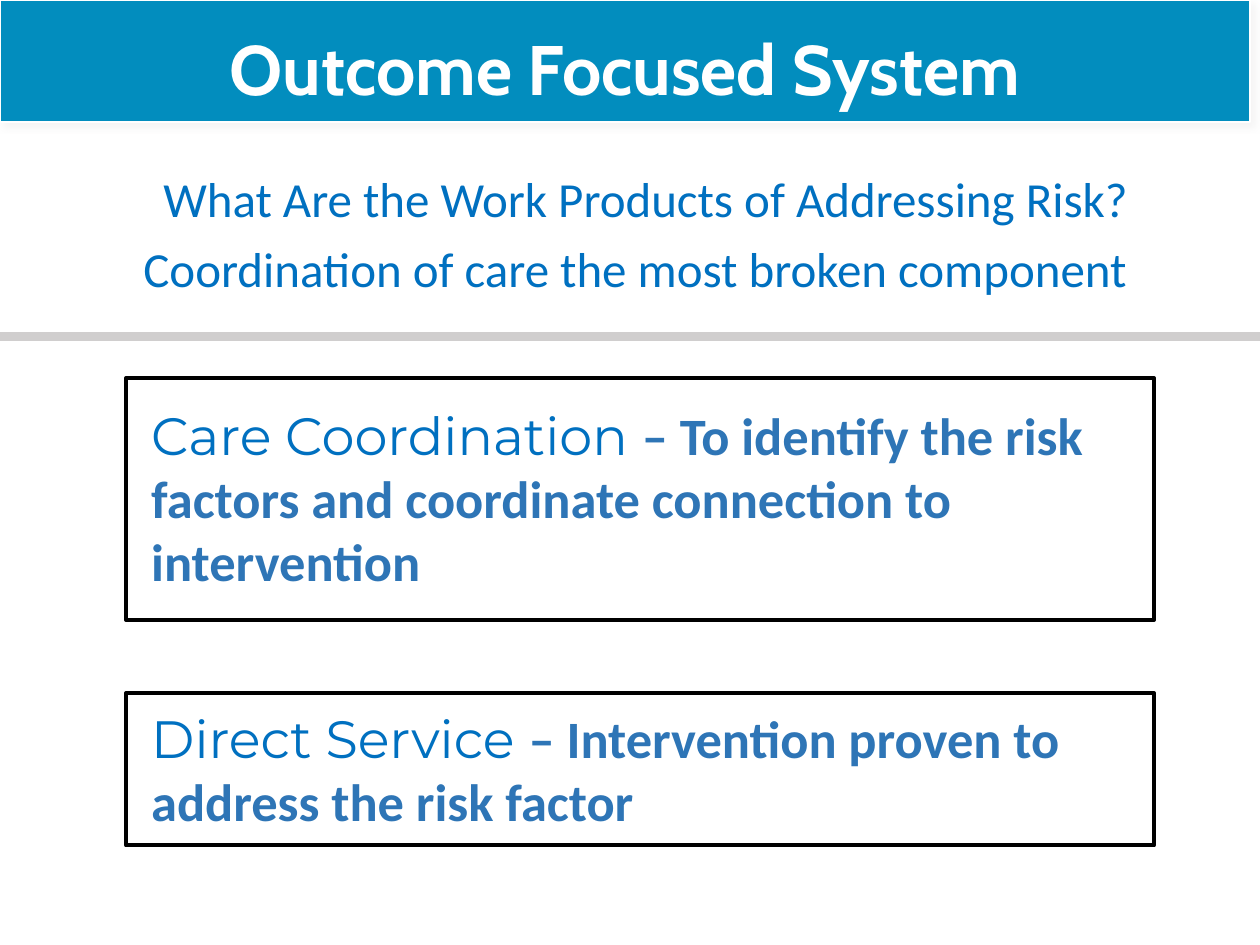
from lxml.etree import SubElement
from pptx import Presentation
from pptx.dml.color import RGBColor
from pptx.enum.shapes import MSO_CONNECTOR, MSO_SHAPE
from pptx.enum.text import MSO_ANCHOR, PP_ALIGN
from pptx.oxml.ns import qn
from pptx.util import Pt

COLORS = {
    "banner": "028DBE",
    "white": "FFFFFF",
    "black": "000000",
    "blue": "0070C0",
    "steel": "2E75B6",
    "rule": "D0CECE",
    "shadow": "E7E6E6",
}


def rgb(name):
    return RGBColor.from_string(COLORS[name])


def add_text(paragraph, text, *, size, font, color, bold=False):
    run = paragraph.add_run()
    run.text = text
    run.font.size = Pt(size)
    run.font.name = font
    run.font.bold = bold
    run.font.color.rgb = rgb(color)


def set_frame(shape, side, vertical):
    """Wrap the text from the top of the shape, with these insets."""
    frame = shape.text_frame
    frame.word_wrap = True
    frame.vertical_anchor = MSO_ANCHOR.TOP
    frame.margin_left = frame.margin_right = Pt(side)
    frame.margin_top = frame.margin_bottom = Pt(vertical)
    return frame


def add_rectangle(slide, box, line, weight, fill=None):
    rectangle = slide.shapes.add_shape(MSO_SHAPE.RECTANGLE, *map(Pt, box))
    rectangle.shadow.inherit = False
    if fill:
        rectangle.fill.solid()
        rectangle.fill.fore_color.rgb = rgb(fill)
    else:
        rectangle.fill.background()
    rectangle.line.color.rgb = rgb(line)
    rectangle.line.width = Pt(weight)
    return rectangle


def add_soft_shadow(shape):
    effects = shape._element.spPr.find(qn("a:effectLst"))
    shadow = SubElement(effects, qn("a:outerShdw"), blurRad=str(Pt(4)),
                        dist=str(Pt(3)), dir="2700000", rotWithShape="0")
    color = SubElement(shadow, qn("a:srgbClr"), val=COLORS["shadow"])
    SubElement(color, qn("a:alpha"), val="40000")


def add_banner(slide, box, title):
    banner = add_rectangle(slide, box, "white", 1, fill="banner")
    add_soft_shadow(banner)
    paragraph = set_frame(banner, 14.4, 14.4).paragraphs[0]
    paragraph.alignment = PP_ALIGN.CENTER
    add_text(paragraph, title, size=40, font="Cabin", color="white", bold=True)


def add_heading(slide, box, question, answer):
    heading = slide.shapes.add_textbox(*map(Pt, box))
    frame = set_frame(heading, 7.2, 3.6)
    first, second = frame.paragraphs[0], frame.add_paragraph()
    first.space_after = Pt(6)
    first._p.get_or_add_pPr().set("marL", str(Pt(12)))
    for paragraph, text in ((first, question), (second, answer)):
        paragraph.alignment = PP_ALIGN.CENTER
        add_text(paragraph, text, size=28, font="Calibri", color="blue")


def add_rule(slide, left, top, width):
    rule = slide.shapes.add_connector(
        MSO_CONNECTOR.STRAIGHT, Pt(left), Pt(top), Pt(left + width), Pt(top))
    rule.line.color.rgb = rgb("rule")
    rule.line.width = Pt(5.5)
    SubElement(rule._element.spPr, qn("a:effectLst"))


def add_definition(slide, box, vertical_inset, term, meaning):
    definition = add_rectangle(slide, box, "black", 2.25)
    paragraph = set_frame(definition, 14.4, vertical_inset).paragraphs[0]
    paragraph.alignment = PP_ALIGN.LEFT
    add_text(paragraph, f"{term} ", size=30, font="Montserrat", color="blue")
    add_text(paragraph, f"– {meaning}", size=30, font="Calibri",
             color="steel", bold=True)


def main():
    presentation = Presentation()
    presentation.slide_width, presentation.slide_height = Pt(720), Pt(540)
    slide = presentation.slides.add_slide(presentation.slide_layouts[6])

    add_banner(slide, (0, 0, 714.24, 69.84), "Outcome Focused System")
    add_heading(slide, (0, 92.88, 725.76, 81.36),
                "What Are the Work Products of Addressing Risk?",
                "Coordination of care the most broken component")
    add_rule(slide, 0, 192.24, 720)
    add_definition(slide, (72, 216, 587.52, 138.24), 14.4, "Care Coordination",
                   "To identify the risk factors and coordinate connection "
                   "to intervention")
    add_definition(slide, (72, 396, 587.52, 87.12), 7.2, "Direct Service",
                   "Intervention proven to address the risk factor")
    presentation.save("out.pptx")


if __name__ == "__main__":
    main()
